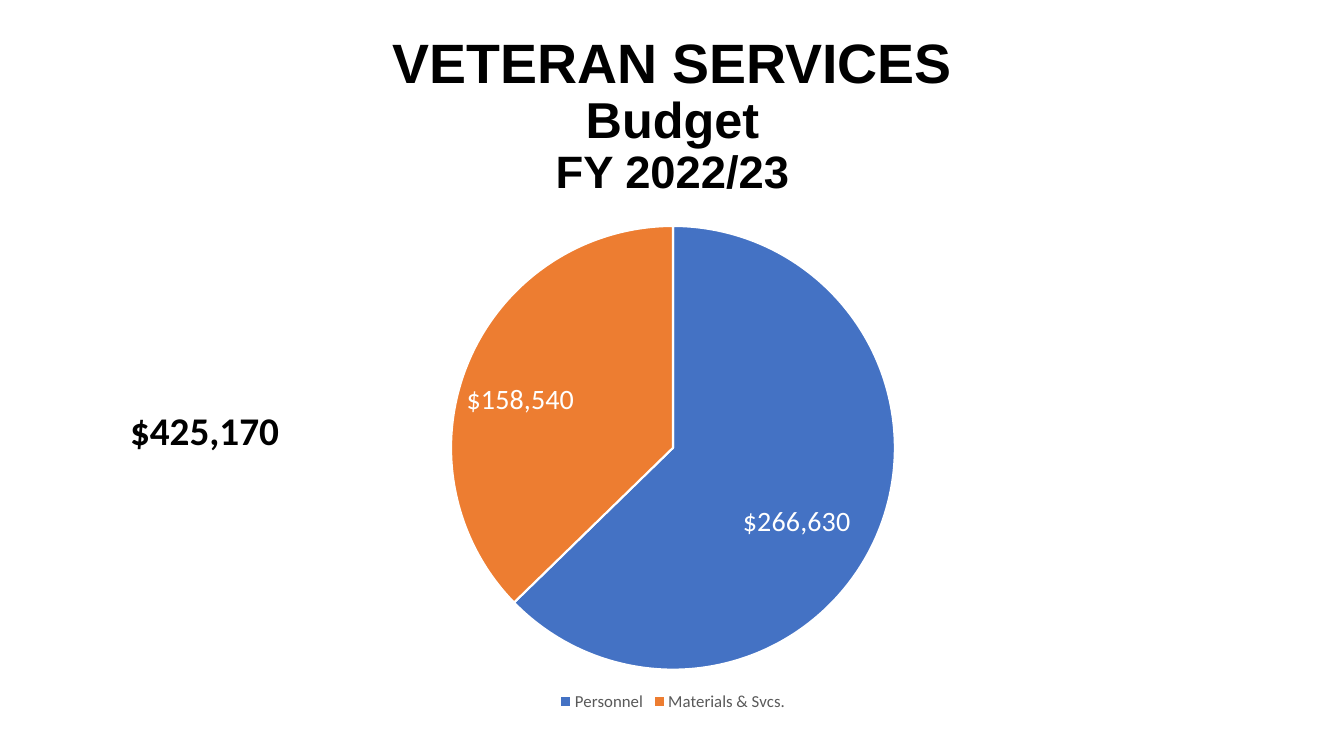
from copy import deepcopy

from lxml import etree
from pptx import Presentation
from pptx.chart.data import CategoryChartData
from pptx.dml.color import RGBColor
from pptx.enum.chart import XL_CHART_TYPE, XL_LEGEND_POSITION
from pptx.enum.text import MSO_ANCHOR, MSO_AUTO_SIZE, PP_ALIGN
from pptx.oxml import parse_xml
from pptx.oxml.ns import nsdecls, qn
from pptx.util import Inches, Pt

PIE = XL_CHART_TYPE.PIE
BOTTOM = XL_LEGEND_POSITION.BOTTOM
MIDDLE = MSO_ANCHOR.MIDDLE
NO_FIT = MSO_AUTO_SIZE.NONE
CENTER, LEFT = PP_ALIGN.CENTER, PP_ALIGN.LEFT

BLACK = RGBColor(0x00, 0x00, 0x00)
WHITE = RGBColor(0xFF, 0xFF, 0xFF)
GREY = RGBColor(0x59, 0x59, 0x59)
BLUE = RGBColor(0x44, 0x72, 0xC4)
ORANGE = RGBColor(0xED, 0x7D, 0x31)

# Content
TITLE_LINES = [("VETERAN SERVICES", 39.6), ("Budget", 36), ("FY 2022/23", 32.4)]
TOTAL = "$425,170"
# Category, amount, colour, label shift as shares of the chart
SLICES = [
    ("Personnel", 266630, BLUE, (0.03, 0.06)),
    ("Materials & Svcs.", 158540, ORANGE, (-0.07, -0.01)),
]
MONEY_FORMAT = '"$"#,##0'

# Layout in inches: left, top, width, height
SLIDE_SIZE = (13.33, 7.5)
TITLE_BOX = (0.92, 0.4, 11.5, 1.52)
BODY_BOX = (0.92, 1.83, 11.5, 4.92)
CHART_BOX = (3.11, 2.04, 7.13, 5.06)
PLOT_SHARES = {"x": 0.19, "y": 0.04, "w": 0.62, "h": 0.87}
TOTAL_INDENT = 0.27


def place(shape, box):
    shape.left, shape.top, shape.width, shape.height = map(Inches, box)


def prepare_frame(shape, box, alignment):
    place(shape, box)
    frame = shape.text_frame
    frame.auto_size = NO_FIT
    frame.word_wrap = True
    frame.vertical_anchor = MIDDLE
    paragraph = frame.paragraphs[0]
    paragraph.alignment = alignment
    paragraph.line_spacing = 0.9
    return paragraph


def style_font(font, name, size, color, bold=False):
    font.name = name
    font.size = Pt(size)
    font.bold = bold
    font.color.rgb = color


def add_run(paragraph, text, name, size):
    run = paragraph.add_run()
    run.text = text
    style_font(run.font, name, size, BLACK, True)
    return run


def manual_layout(shares, inner=False):
    target = '<c:layoutTarget val="inner"/>' if inner else ""
    modes = '<c:xMode val="edge"/><c:yMode val="edge"/>' if inner else ""
    values = "".join(f'<c:{key} val="{value}"/>' for key, value in shares.items())
    return parse_xml(
        f'<c:layout {nsdecls("c")}><c:manualLayout>{target}{modes}{values}'
        "</c:manualLayout></c:layout>"
    )


presentation = Presentation()
presentation.slide_width, presentation.slide_height = map(Inches, SLIDE_SIZE)
slide = presentation.slides.add_slide(presentation.slide_layouts[1])

# Title: one paragraph with line breaks sized like the line before
title = prepare_frame(slide.shapes.title, TITLE_BOX, CENTER)
for number, (line, size) in enumerate(TITLE_LINES):
    if number:
        title.add_line_break()
        title._p[-1].append(deepcopy(run._r.rPr))
    run = add_run(title, line, "Arial", size)

# Budget total
total = prepare_frame(slide.placeholders[1], BODY_BOX, LEFT)
total.space_before = Pt(10)
properties = total._p.get_or_add_pPr()
properties.set("marL", str(Inches(TOTAL_INDENT)))
properties.set("indent", "0")
etree.SubElement(properties, qn("a:buNone"))
add_run(total, TOTAL, "Calibri", 28)

# Pie chart
chart_data = CategoryChartData(number_format=MONEY_FORMAT)
chart_data.categories = [category for category, *_ in SLICES]
chart_data.add_series("Series 1", [amount for _, amount, *_ in SLICES])
chart = slide.shapes.add_chart(PIE, *map(Inches, CHART_BOX), chart_data).chart
chart.has_title = False
style_font(chart.font, "Calibri", 10, BLACK)
chart.has_legend = True
chart.legend.position = BOTTOM
chart.legend.include_in_layout = False
style_font(chart.legend.font, "Calibri", 12, GREY)

plot = chart.plots[0]
plot.vary_by_categories = True
plot_area = chart._chartSpace.chart.plotArea
for layout in plot_area.findall(qn("c:layout")):
    plot_area.remove(layout)
plot_area.insert(0, manual_layout(PLOT_SHARES, inner=True))

# Slices and their labels
series = plot.series[0]
labels = series.data_labels
labels.show_value = True
labels.number_format = MONEY_FORMAT
labels.number_format_is_linked = False
style_font(labels.font, "Calibri", 20, WHITE)
for index, (_, _, color, (shift_x, shift_y)) in enumerate(SLICES):
    point = series.points[index]
    point.format.fill.solid()
    point.format.fill.fore_color.rgb = color
    point.format.line.color.rgb = WHITE
    point.format.line.width = Pt(1.5)
    style_font(point.data_label.font, "Calibri", 20, WHITE)
    label = labels._element.findall(qn("c:dLbl"))[index]
    label.insert(1, manual_layout({"x": shift_x, "y": shift_y}))
    number_format = etree.Element(qn("c:numFmt"))
    number_format.set("formatCode", MONEY_FORMAT)
    number_format.set("sourceLinked", "0")
    label.insert(2, number_format)
    position = label.find(qn("c:dLblPos"))
    if position is None:
        position = etree.Element(qn("c:dLblPos"))
        label.find(qn("c:showLegendKey")).addprevious(position)
    position.set("val", "ctr")

presentation.save("out.pptx")
